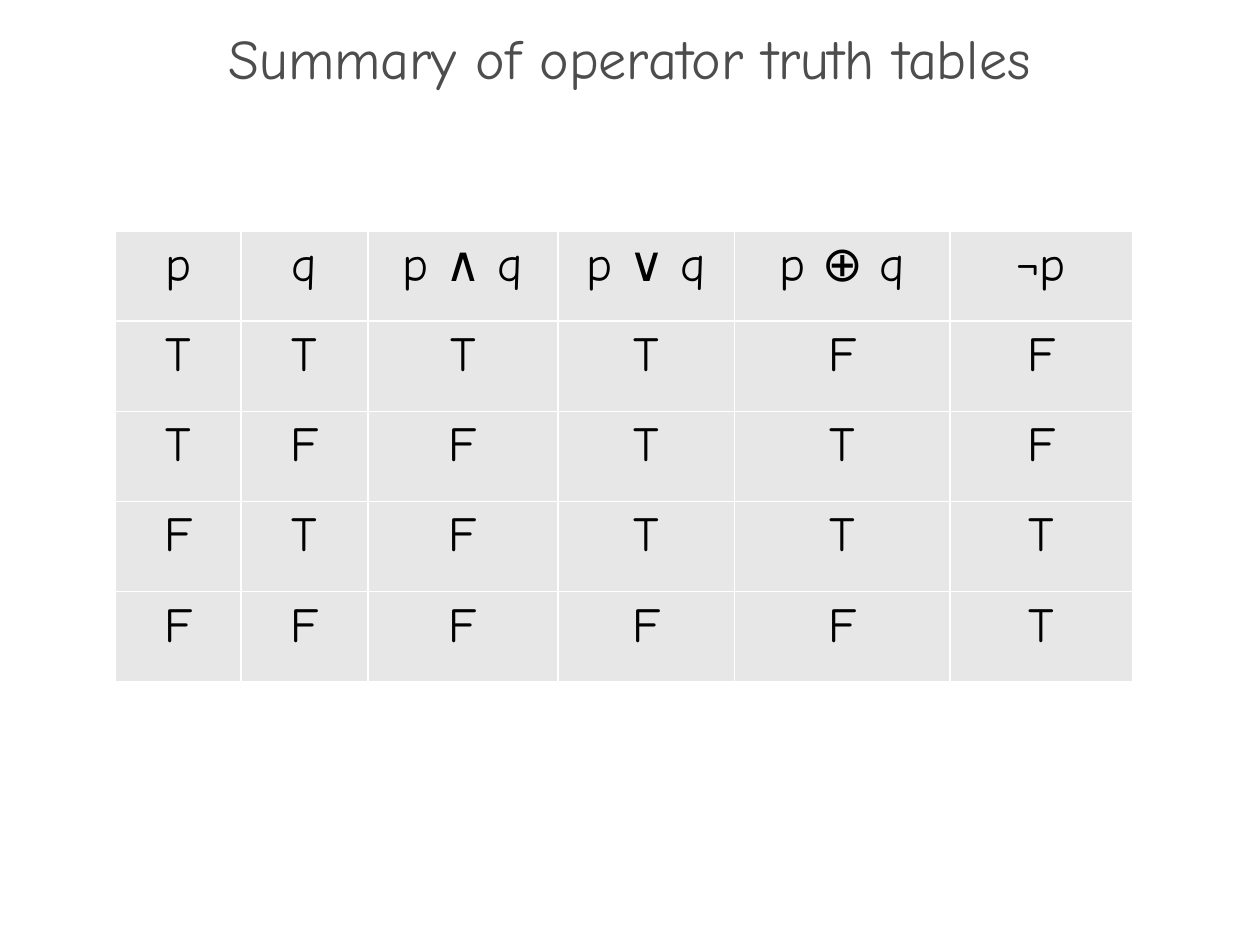
import pptx
import pptx.util
import pptx.dml.color
import pptx.enum.text
import pptx.oxml
import pptx.oxml.ns

Pt = pptx.util.Pt
RGB = pptx.dml.color.RGBColor.from_string
CENTER = pptx.enum.text.PP_ALIGN.CENTER
MIDDLE = pptx.enum.text.MSO_ANCHOR.MIDDLE
NS = pptx.oxml.ns.nsdecls("a")
FONT = "Comic Neue"
COLORS = {"title": "4D4D4D", "text": "000000", "cell": "E7E7E7", "border": "FFFFFF"}


def format_paragraph(p, size, color):
    p.alignment = CENTER
    for r in p.runs:
        r.font.name = FONT
        r.font.size = Pt(size)
        r.font.bold = False
        r.font.color.rgb = RGB(COLORS[color])


prs = pptx.Presentation()
prs.slide_width, prs.slide_height = Pt(720), Pt(540)
s = prs.slides.add_slide(prs.slide_layouts[5])

title = s.shapes.title
title.left, title.top, title.width, title.height = Pt(0), Pt(19.5), Pt(720), Pt(36)
tf = title.text_frame
tf.text = "Summary of operator truth tables"
tf.vertical_anchor = MIDDLE
tf.paragraphs[0].line_spacing = 0.7
format_paragraph(tf.paragraphs[0], 32, "title")

rows = [
    ["p", "q", "p ∧ q", "p ∨ q", "p ⊕ q", "¬p"],
    ["T", "T", "T", "T", "F", "F"],
    ["T", "F", "F", "T", "T", "F"],
    ["F", "T", "F", "T", "T", "T"],
    ["F", "F", "F", "F", "F", "T"],
]
col_widths = [72, 72.5, 108.5, 101, 123, 104.5]
row_height = 51.55

table = s.shapes.add_table(
    len(rows), len(col_widths), Pt(65.8), Pt(132),
    Pt(sum(col_widths)), Pt(row_height * len(rows)),
).table
table.first_row = False
table.horz_banding = False
for col, width in zip(table.columns, col_widths):
    col.width = Pt(width)

for i, values in enumerate(rows):
    table.rows[i].height = Pt(row_height)
    for j, value in enumerate(values):
        cell = table.cell(i, j)
        tcPr = cell._tc.get_or_add_tcPr()
        for side in ("lnL", "lnR", "lnT", "lnB"):
            tcPr.append(pptx.oxml.parse_xml(
                f'<a:{side} {NS} w="{Pt(1)}"><a:solidFill>'
                f'<a:srgbClr val="{COLORS["border"]}"/></a:solidFill></a:{side}>'
            ))
        cell.fill.solid()
        cell.fill.fore_color.rgb = RGB(COLORS["cell"])
        p = cell.text_frame.paragraphs[0]
        p.text = value
        format_paragraph(p, 28, "text")
        p._p.get_or_add_pPr().append(pptx.oxml.parse_xml(
            f'<a:spcBef {NS}><a:spcPct val="20000"/></a:spcBef>'
        ))

prs.save("out.pptx")
